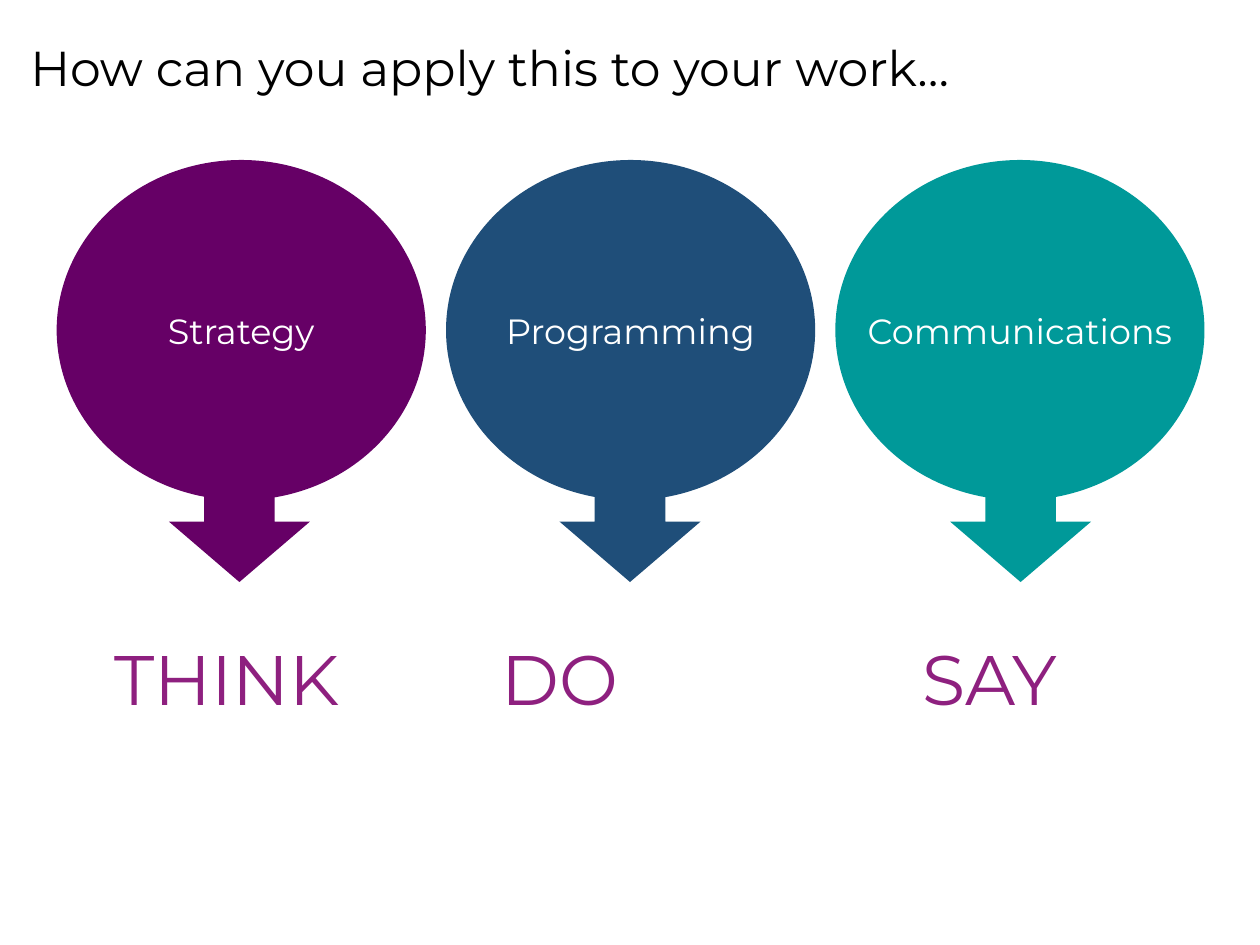
"""Build a slide that links three work areas to think, do and say."""
from lxml import etree
from pptx import Presentation
from pptx.dml.color import RGBColor
from pptx.enum import shapes, text
from pptx.oxml import ns
from pptx.util import Inches, Pt

PLUM = RGBColor(0x66, 0x00, 0x66)
NAVY = RGBColor(0x1F, 0x4E, 0x79)
TEAL = RGBColor(0x00, 0x99, 0x99)
PINK = RGBColor(0x8E, 0x20, 0x7F)
BLACK = RGBColor(0x00, 0x00, 0x00)
WHITE = RGBColor(0xFF, 0xFF, 0xFF)
AREAS = [("Strategy", PLUM), ("Programming", NAVY), ("Communications", TEAL)]


def write(frame, words, size=20, color=WHITE, align=text.PP_ALIGN.LEFT,
          anchor=text.MSO_ANCHOR.TOP, space=1.0, inset=(0.1, 0.05, 0.1, 0.05),
          wrap=True, tabs=()):
    frame.auto_size = text.MSO_AUTO_SIZE.NONE
    frame.word_wrap = wrap
    frame.vertical_anchor = anchor
    (frame.margin_left, frame.margin_top,
     frame.margin_right, frame.margin_bottom) = map(Inches, inset)
    para = frame.paragraphs[0]
    if tabs:
        stops = etree.SubElement(para._p.get_or_add_pPr(), ns.qn("a:tabLst"))
        for stop in tabs:
            etree.SubElement(stops, ns.qn("a:tab"),
                             pos=str(Inches(stop)), algn="l")
    para.alignment = align
    para.line_spacing = space
    run = para.add_run()
    run.text = words
    run.font.name = "Montserrat"
    run.font.size = Pt(size)
    run.font.color.rgb = color


class Deck:
    def __init__(self):
        self.show = Presentation()
        self.show.slide_width, self.show.slide_height = Inches(10), Inches(7.5)
        self.slide = self.show.slides.add_slide(self.show.slide_layouts[5])

    def title(self, words, left, top, width, height):
        item = self.slide.shapes.title
        item.left, item.top = Inches(left), Inches(top)
        item.width, item.height = Inches(width), Inches(height)
        write(item.text_frame, words, size=28, color=BLACK, space=0.9)

    def label(self, words, left, top, width, height, **style):
        box = self.slide.shapes.add_textbox(
            Inches(left), Inches(top), Inches(width), Inches(height))
        write(box.text_frame, words, **style)

    def shape(self, kind, color, left, top, width, height):
        item = self.slide.shapes.add_shape(
            kind, Inches(left), Inches(top), Inches(width), Inches(height))
        item.shadow.inherit = False
        item.fill.solid()
        item.fill.fore_color.rgb = color
        item.line.fill.background()
        return item

    def circle(self, words, color, left):
        item = self.shape(shapes.MSO_SHAPE.OVAL, color, left, 1.27, 2.93, 2.7)
        write(item.text_frame, words, align=text.PP_ALIGN.CENTER,
              anchor=text.MSO_ANCHOR.MIDDLE, inset=(0, 0, 0, 0), wrap=False)

    def arrow(self, color, left):
        self.shape(shapes.MSO_SHAPE.DOWN_ARROW, color, left, 3.66, 1.12, 0.96)


def main():
    deck = Deck()
    deck.title("How can you apply this to your work…", 0.14, 0.3, 8.62, 1.45)
    deck.label("THINK\tDO\tSAY", 0.79, 5.18, 8.91, 0.57, size=40, color=PINK,
               space=0.7, inset=(0.12, 0.05, 0, 0.05), tabs=(3.07, 6.41))
    for col, (name, color) in enumerate(AREAS):
        deck.circle(name, color, 0.45 + 3.09 * col)
        deck.arrow(color, 1.34 + 3.1 * col)
    deck.show.save("out.pptx")


if __name__ == "__main__":
    main()
